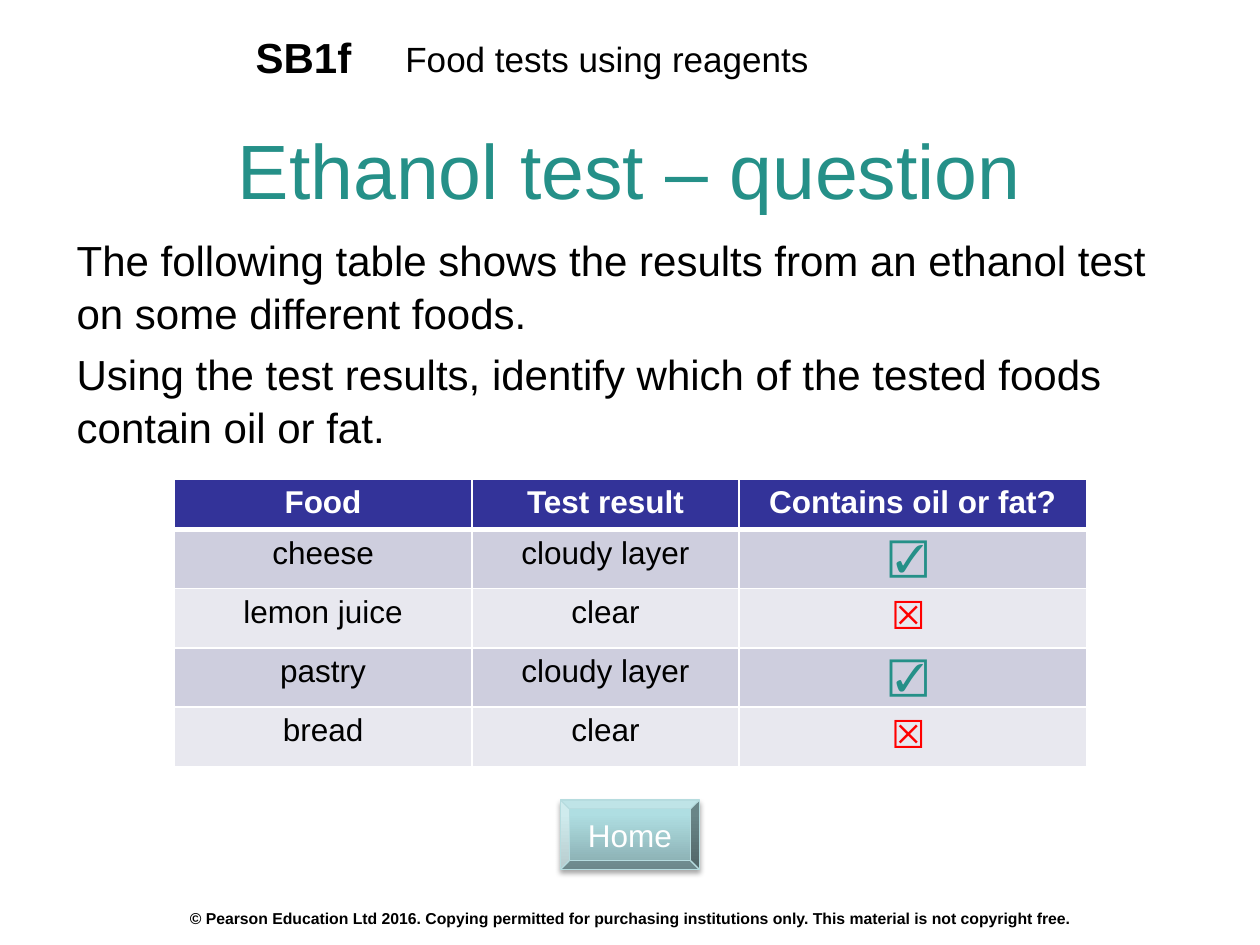
from lxml.etree import SubElement
from pptx import Presentation
from pptx.dml.color import RGBColor
from pptx.enum.shapes import MSO_SHAPE
from pptx.enum.text import MSO_ANCHOR, PP_ALIGN
from pptx.oxml import parse_xml
from pptx.oxml.ns import qn
from pptx.util import Pt

COLOURS = {
    "black": "000000", "white": "FFFFFF", "teal": "259088", "red": "FF0000",
    "header": "333399", "band_dark": "CECEDE", "band_light": "E8E8EF",
    "button_low": "87ABAE", "button_mid": "AFDEE2", "button_high": "AFE0E4",
    "button_line": "B6DCDF",
}
NAMESPACE = 'xmlns:a="http://schemas.openxmlformats.org/drawingml/2006/main"'
PLAIN_TABLE_STYLE = "{2D5ABB26-0587-4C30-8999-92F81FD0307C}"
RESULTS = [
    ("Food", "Test result", "Contains oil or fat?"),
    ("cheese", "cloudy layer", ""),
    ("lemon juice", "clear", ""),
    ("pastry", "cloudy layer", ""),
    ("bread", "clear", ""),
]
MARKS = [("",), ("☑",), ("☒",), ("☑",), ("☒",)]
MARK_COLOURS = {"☑": "teal", "☒": "red"}


def format_text(text_frame, size, colour="black", bold=False, align=PP_ALIGN.LEFT):
    """Apply one font and alignment to every paragraph."""
    for paragraph in text_frame.paragraphs:
        paragraph.alignment = align
        for run in paragraph.runs:
            run.font.name = "Arial"
            run.font.size = Pt(size)
            run.font.bold = bold
            run.font.color.rgb = RGBColor.from_string(COLOURS[colour])


def add_text(slide, box, text, size, anchor=MSO_ANCHOR.TOP, **style):
    """Add a wrapped text box and return its text frame."""
    text_frame = slide.shapes.add_textbox(*map(Pt, box)).text_frame
    text_frame.word_wrap = True
    text_frame.vertical_anchor = anchor
    text_frame.text = text
    format_text(text_frame, size, **style)
    return text_frame


def add_heading(slide, box):
    """Add the unit code, the topic and the slide title."""
    left, top, width, height = box
    add_text(slide, (left + 103, top, 80, 28), "SB1f", 24, bold=True)
    add_text(slide, (left + 188.6, top + 3.5, 448, 29), "Food tests using reagents", 20)
    add_text(slide, (left, top + height - 51, width, 51), "Ethanol test – question", 44,
             MSO_ANCHOR.MIDDLE, colour="teal", align=PP_ALIGN.CENTER)


def add_question(slide, box):
    """Add the two paragraphs of the question."""
    text = ("The following table shows the results from an ethanol test on some different foods.\n"
            "Using the test results, identify which of the tested foods contain oil or fat.")
    text_frame = add_text(slide, box, text, 24)
    for paragraph in text_frame.paragraphs:
        paragraph.line_spacing = 1.05
    text_frame.paragraphs[1].space_before = Pt(4.8)


def add_plain_table(slide, box, rows, widths, header_height):
    """Add an unstyled table with centred text and equal body rows."""
    table = slide.shapes.add_table(len(rows), len(widths), *map(Pt, box)).table
    table.first_row = table.horz_banding = False
    table._tbl.tblPr.find(qn("a:tableStyleId")).text = PLAIN_TABLE_STYLE
    for column, width in zip(table.columns, widths):
        column.width = Pt(width)
    body_height = (box[3] - header_height) / (len(rows) - 1)
    for index, row in enumerate(table.rows):
        row.height = Pt(body_height if index else header_height)
        for cell, text in zip(row.cells, rows[index]):
            cell.text = text
            cell.fill.background()
    return table


def add_cell_borders(cell, bottom_width):
    """Draw white lines around a cell."""
    properties = cell._tc.get_or_add_tcPr()
    widths = {"lnL": 1, "lnR": 1, "lnT": 1, "lnB": bottom_width}
    for position, (side, width) in enumerate(widths.items()):
        properties.insert(position, parse_xml(
            f'<a:{side} {NAMESPACE} w="{Pt(width)}"><a:solidFill>'
            f'<a:srgbClr val="{COLOURS["white"]}"/></a:solidFill></a:{side}>'))


def add_results(slide, box):
    """Add the banded table of test results."""
    table = add_plain_table(slide, box, RESULTS, (170.4, 152.4, 198.6), 28)
    for index, row in enumerate(table.rows):
        is_header = index == 0
        band = "header" if is_header else "band_dark" if index % 2 else "band_light"
        for cell in row.cells:
            cell.fill.solid()
            cell.fill.fore_color.rgb = RGBColor.from_string(COLOURS[band])
            format_text(cell.text_frame, 18, "white" if is_header else "black",
                        is_header, PP_ALIGN.CENTER)
            add_cell_borders(cell, 3 if is_header else 1)


def add_marks(slide, box):
    """Add the ticks and crosses over the last column of results."""
    table = add_plain_table(slide, box, MARKS, (box[2],), 35.3)
    for cell in table.iter_cells():
        format_text(cell.text_frame, 22, MARK_COLOURS.get(cell.text, "black"),
                    align=PP_ALIGN.CENTER)


def add_home_button(slide, box):
    """Add the bevelled button with its gradient and soft shadow."""
    button = slide.shapes.add_shape(MSO_SHAPE.BEVEL, *map(Pt, box))
    button.shadow.inherit = False
    button.line.color.rgb = RGBColor.from_string(COLOURS["button_line"])
    button.line.width = Pt(0.75)
    button.fill.gradient()
    gradient = button._element.spPr.find(qn("a:gradFill"))
    stops = gradient.find(qn("a:gsLst"))
    for stop in list(stops):
        stops.remove(stop)
    for position, name in ((0, "button_low"), (80, "button_mid"), (100, "button_high")):
        stop = SubElement(stops, qn("a:gs"), pos=str(position * 1000))
        SubElement(stop, qn("a:srgbClr"), val=COLOURS[name])
    button.fill.gradient_angle = 90
    button._element.spPr.find(qn("a:effectLst")).append(parse_xml(
        f'<a:outerShdw {NAMESPACE} blurRad="{Pt(3.1)}" dist="{Pt(1.8)}" dir="5400000" '
        f'rotWithShape="0"><a:srgbClr val="{COLOURS["black"]}"><a:alpha val="35000"/>'
        '</a:srgbClr></a:outerShdw>'))
    text_frame = button.text_frame
    text_frame.text = "Home"
    text_frame.word_wrap = False
    text_frame.vertical_anchor = MSO_ANCHOR.MIDDLE
    format_text(text_frame, 18, "white", align=PP_ALIGN.CENTER)


def add_footer(slide, box):
    """Add the copyright line."""
    add_text(slide, box, "© Pearson Education Ltd 2016. Copying permitted for purchasing "
             "institutions only. This material is not copyright free.", 9,
             MSO_ANCHOR.MIDDLE, bold=True, align=PP_ALIGN.CENTER)


def main():
    """Build and save the slide."""
    presentation = Presentation()
    presentation.slide_width, presentation.slide_height = Pt(720), Pt(540)
    slide = presentation.slides.add_slide(presentation.slide_layouts[6])
    add_heading(slide, (36, 14.5, 648, 107.5))
    add_question(slide, (36.7, 129, 646.6, 130))
    add_results(slide, (99.4, 273.6, 521.4, 163.6))
    add_marks(slide, (422.6, 267.1, 193, 171.3))
    add_home_button(slide, (320.4, 457.2, 79.2, 39.6))
    add_footer(slide, (0, 509, 720, 31))
    presentation.save("out.pptx")


if __name__ == "__main__":
    main()
